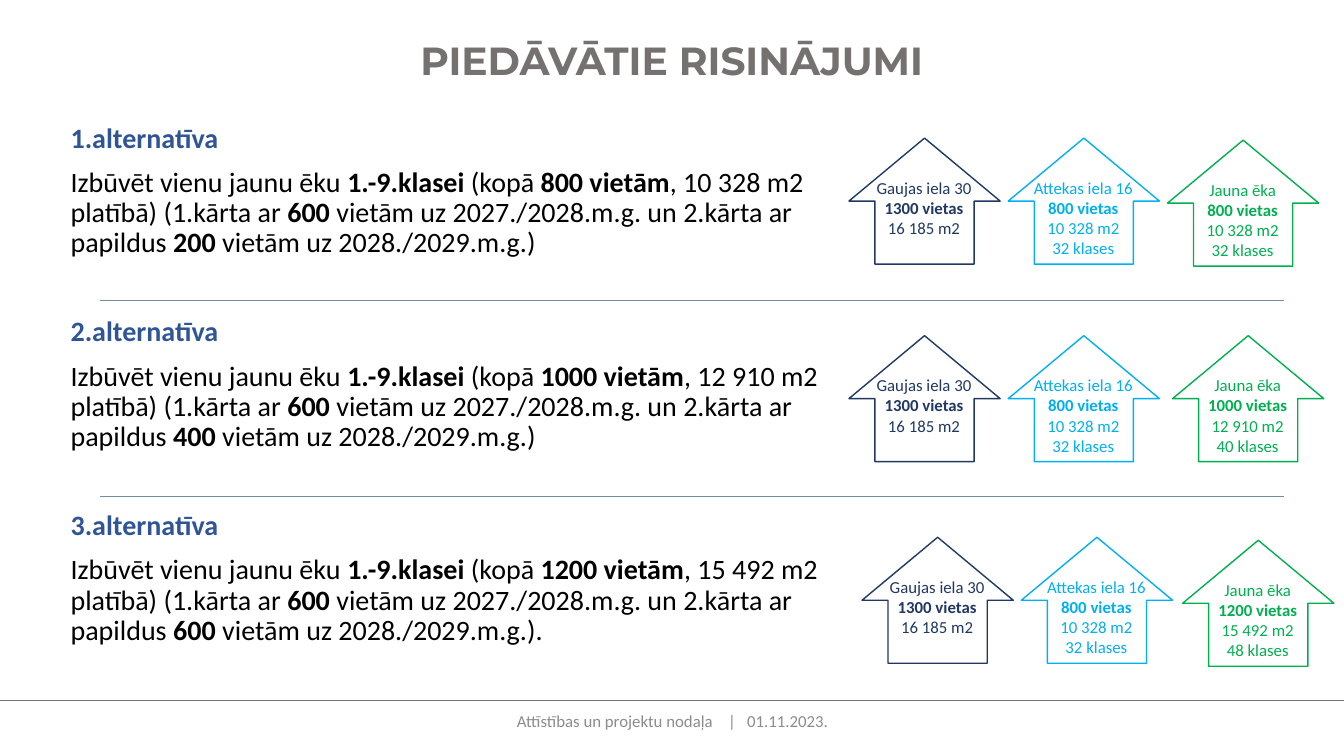
import pptx
import pptx.dml.color
import pptx.enum.shapes
import pptx.enum.text
import pptx.oxml
import pptx.oxml.ns
import pptx.util
from pptx.util import Inches

RGBColor = pptx.dml.color.RGBColor
GREY = RGBColor(0x76, 0x71, 0x71)
FOOTER_GREY = RGBColor(0x8C, 0x8C, 0x8C)
DIVIDER_BLUE = RGBColor(0x6F, 0x8E, 0x9F)
HEADING_BLUE = RGBColor(0x2F, 0x55, 0x97)
BLACK = RGBColor(0, 0, 0)
NAVY = RGBColor(0x20, 0x38, 0x64)
SKY = RGBColor(0x00, 0xB0, 0xF0)
GREEN = RGBColor(0x00, 0xB0, 0x50)
CENTER = pptx.enum.text.PP_ALIGN.CENTER

GAUJAS = ["Gaujas iela 30", "1300 vietas", "16 185 m2"]
ATTEKAS = ["Attekas iela 16", "800 vietas", "10 328 m2", "32 klases"]

ALTERNATIVES = [
    ("800", "10 328 m2", "200", "32 klases", ".)", (8.42, 1.37), (11.58, 1.39)),
    ("1000", "12 910 m2", "400", "40 klases", ".)", (8.42, 3.33), (11.63, 3.33)),
    ("1200", "15 492 m2", "600", "48 klases", ".).", (8.55, 5.33), (11.73, 5.36)),
]


def style_font(font, size, color, bold=False, name="Calibri"):
    font.name = name
    font.size = pptx.util.Pt(size)
    font.bold = bold
    font.color.rgb = color


def place(shape, left, top, width, height):
    shape.left, shape.top = Inches(left), Inches(top)
    shape.width, shape.height = Inches(width), Inches(height)
    frame = shape.text_frame
    frame.word_wrap = True
    frame.auto_size = pptx.enum.text.MSO_AUTO_SIZE.NONE
    frame.vertical_anchor = pptx.enum.text.MSO_ANCHOR.TOP
    return frame


def add_text_box(slide, left, top, width, height):
    shape = slide.shapes.add_textbox(0, 0, 0, 0)
    return place(shape, left, top, width, height)


def next_paragraph(frame, index):
    return frame.add_paragraph() if index else frame.paragraphs[0]


def add_rule(slide, left, right, top, color):
    line = slide.shapes.add_connector(
        pptx.enum.shapes.MSO_CONNECTOR.STRAIGHT,
        Inches(left), Inches(top), Inches(right), Inches(top))
    line.line.color.rgb = color
    line.line.width = pptx.util.Pt(0.5)
    properties = line._element.spPr
    properties.append(pptx.oxml.parse_xml(
        "<a:effectLst %s/>" % pptx.oxml.ns.nsdecls("a")))


def add_house(slide, left, top, lines, color):
    house = slide.shapes.add_shape(
        pptx.enum.shapes.MSO_SHAPE.UP_ARROW,
        Inches(left), Inches(top), Inches(1.5), Inches(1.25))
    house.adjustments[0] = 0.656
    house.adjustments[1] = 0.5
    house.shadow.inherit = False
    house.fill.background()
    house.line.color.rgb = color
    house.line.width = pptx.util.Pt(1)

    frame = add_text_box(slide, left + 0.13, top + 0.34, 1.23, 0.91)
    for index, line in enumerate(lines):
        paragraph = next_paragraph(frame, index)
        paragraph.text = line
        paragraph.alignment = CENTER
        style_font(paragraph.font, 12, color, bold=index == 1)


def add_title(slide, text):
    frame = place(slide.shapes.title, 0.44, 0.31, 12.44, 0.57)
    paragraph = frame.paragraphs[0]
    paragraph.text = text
    paragraph.alignment = CENTER
    style_font(paragraph.font, 28, GREY, bold=True, name="Montserrat")


def format_body_paragraph(paragraph, space_before, color, bold=False):
    properties = paragraph._p.get_or_add_pPr()
    properties.set("marL", "0")
    properties.set("indent", "0")
    properties.append(pptx.oxml.parse_xml(
        "<a:buNone %s/>" % pptx.oxml.ns.nsdecls("a")))
    paragraph.line_spacing = 0.9
    paragraph.space_before = pptx.util.Pt(space_before)
    style_font(paragraph.font, 20, color, bold)


def add_descriptions(slide):
    frame = place(slide.placeholders[1], 0.6, 1.18, 7.63, 5.14)
    for index, (places, area, extra, _, ending, _, _) in enumerate(ALTERNATIVES):
        heading = next_paragraph(frame, index)
        heading.text = f"{index + 1}.alternatīva"
        format_body_paragraph(heading, 42 if index else 10, HEADING_BLUE, bold=True)

        description = frame.add_paragraph()
        format_body_paragraph(description, 10, BLACK)
        pieces = [
            "Izbūvēt vienu jaunu ēku ", "1.-9.klasei", " (kopā ",
            f"{places} vietām", f", {area} platībā) (1.kārta ar ", "600",
            " vietām uz 2027./2028.m.g. un 2.kārta ar papildus ", extra,
            f" vietām uz 2028./2029.m.g{ending}",
        ]
        for position, piece in enumerate(pieces):
            run = description.add_run()
            run.text = piece
            run.font.bold = position % 2 == 1


def add_footer(slide):
    add_rule(slide, 0, 13.33, 6.95, GREY)
    frame = add_text_box(slide, 4.42, 6.95, 4.5, 0.4)
    frame.vertical_anchor = pptx.enum.text.MSO_ANCHOR.MIDDLE
    paragraph = frame.paragraphs[0]
    paragraph.alignment = CENTER
    style_font(paragraph.font, 12, FOOTER_GREY)
    for text, spacing in [("Attīstības un projektu nodaļa", 0), (" ", 800),
                          ("| ", 270), ("01.11.2023.", 0)]:
        run = paragraph.add_run()
        run.text = text
        run.font._element.set("spc", str(spacing))


def main():
    presentation = pptx.Presentation()
    presentation.slide_width = Inches(13.33)
    presentation.slide_height = Inches(7.5)
    slide = presentation.slides.add_slide(presentation.slide_layouts[1])

    add_title(slide, "PIEDĀVĀTIE RISINĀJUMI")
    add_descriptions(slide)
    for places, area, _, classes, _, (left, top), new_house in ALTERNATIVES:
        add_house(slide, left, top, GAUJAS, NAVY)
        add_house(slide, left + 1.58, top, ATTEKAS, SKY)
        add_house(slide, *new_house,
                  ["Jauna ēka", f"{places} vietas", area, classes], GREEN)
    for top in (2.98, 4.92):
        add_rule(slide, 0.99, 12.74, top, DIVIDER_BLUE)
    add_footer(slide)

    presentation.save("out.pptx")


if __name__ == "__main__":
    main()
